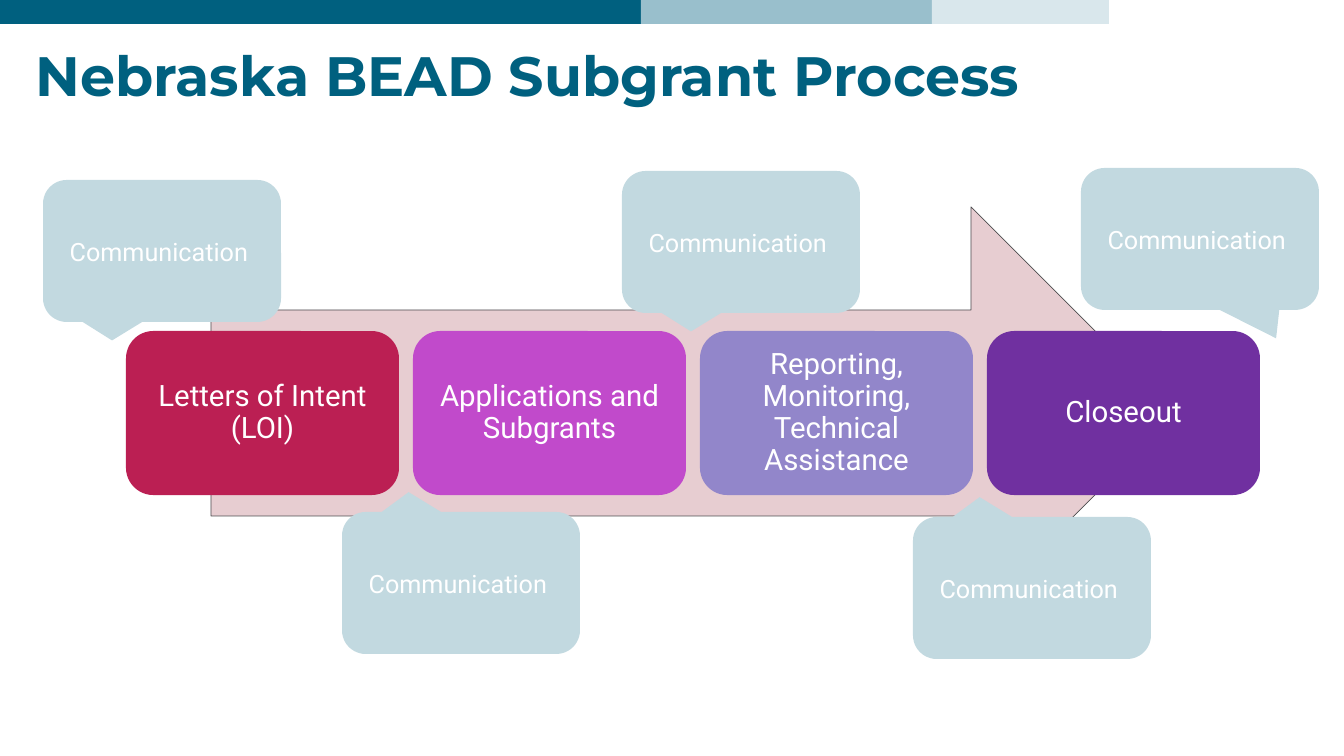
from pptx import Presentation
from pptx.dml.color import RGBColor
from pptx.enum.shapes import MSO_SHAPE as Preset
from pptx.enum.text import MSO_ANCHOR as Anchor, PP_ALIGN as Align
from pptx.util import Emu, Pt

PX_PER_INCH = 100.8

WHITE = RGBColor(0xFF, 0xFF, 0xFF)
TEAL = RGBColor(0x00, 0x60, 0x7F)
MID_TEAL = RGBColor(0x99, 0xBF, 0xCC)
PALE_TEAL = RGBColor(0xD9, 0xE7, 0xEC)
BUBBLE = RGBColor(0xC2, 0xD9, 0xE0)
ROSE = RGBColor(0xE7, 0xCD, 0xD1)
GRAY = RGBColor(0x4D, 0x4D, 0x4F)
CRIMSON = RGBColor(0xBB, 0x1F, 0x53)
MAGENTA = RGBColor(0xC1, 0x4A, 0xCB)
LAVENDER = RGBColor(0x92, 0x86, 0xCA)
PURPLE = RGBColor(0x70, 0x30, 0xA0)

HEADER_BARS = [(641, TEAL), (291, MID_TEAL), (177, PALE_TEAL)]
STAGES = [
    ("Letters of Intent (LOI)", CRIMSON),
    ("Applications and Subgrants", MAGENTA),
    ("Reporting, Monitoring, Technical Assistance", LAVENDER),
    ("Closeout", PURPLE),
]
STAGE_LEFT, STAGE_PITCH = 126, 287

# Tail tips relative to the bubble's centre, as shares of its size
TAIL_DOWN = (-0.21, 0.63)
TAIL_UP = (-0.22, -0.64)
TAIL_RIGHT = (0.32, 0.7)
BUBBLES = [
    (43, 180, TAIL_DOWN),
    (622, 171, TAIL_DOWN),
    (342, 512, TAIL_UP),
    (913, 517, TAIL_UP),
    (1081, 168, TAIL_RIGHT),
]


def px(length):
    return Emu(round(length * 914400 / PX_PER_INCH))


def add_filled_shape(slide, preset, left, top, width, height, color):
    shape = slide.shapes.add_shape(preset, px(left), px(top), px(width), px(height))
    shape.shadow.inherit = False
    shape.fill.solid()
    shape.fill.fore_color.rgb = color
    shape.line.fill.background()
    return shape


def write_text(shape, text, size, font_name, color, align, anchor, line_spacing=1.0):
    frame = shape.text_frame
    frame.text = text
    frame.word_wrap = True
    frame.vertical_anchor = anchor
    paragraph = frame.paragraphs[0]
    paragraph.alignment = align
    paragraph.line_spacing = line_spacing
    font = paragraph.runs[0].font
    font.name = font_name
    font.size = Pt(size)
    font.color.rgb = color
    return font


def add_header_bars(slide):
    left = 0
    for width, color in HEADER_BARS:
        add_filled_shape(slide, Preset.RECTANGLE, left, -1, width, 25, color)
        left += width


def add_title(slide, text):
    box = slide.shapes.add_textbox(px(26), px(44), px(1083), px(127))
    font = write_text(box, text, 39.6, "Montserrat", TEAL, Align.LEFT, Anchor.TOP, 0.9)
    font.bold = True


def add_process_arrow(slide):
    arrow = add_filled_shape(slide, Preset.RIGHT_ARROW, 211, 207, 966, 412, ROSE)
    arrow.line.color.rgb = GRAY
    arrow.line.width = Pt(0.5)


def add_stage(slide, left, text, color):
    stage = add_filled_shape(slide, Preset.ROUNDED_RECTANGLE, left, 331, 273, 164, color)
    write_text(stage, text, 21, "Roboto", WHITE, Align.CENTER, Anchor.MIDDLE, 0.9)
    frame = stage.text_frame
    frame.margin_left = frame.margin_right = px(9)
    frame.margin_top = frame.margin_bottom = px(9)


def add_bubble(slide, left, top, tail):
    bubble = add_filled_shape(
        slide, Preset.ROUNDED_RECTANGULAR_CALLOUT, left, top, 238, 142, BUBBLE)
    bubble.adjustments[0], bubble.adjustments[1] = tail
    write_text(bubble, "Communication ", 18, "Roboto", WHITE, Align.CENTER, Anchor.MIDDLE)


def main():
    presentation = Presentation()
    presentation.slide_width = px(1344)
    presentation.slide_height = px(756)
    slide = presentation.slides.add_slide(presentation.slide_layouts[6])

    add_header_bars(slide)
    add_title(slide, "Nebraska BEAD Subgrant Process")
    add_process_arrow(slide)
    for index, (text, color) in enumerate(STAGES):
        add_stage(slide, STAGE_LEFT + index * STAGE_PITCH, text, color)
    for left, top, tail in BUBBLES:
        add_bubble(slide, left, top, tail)

    presentation.save("out.pptx")


if __name__ == "__main__":
    main()
